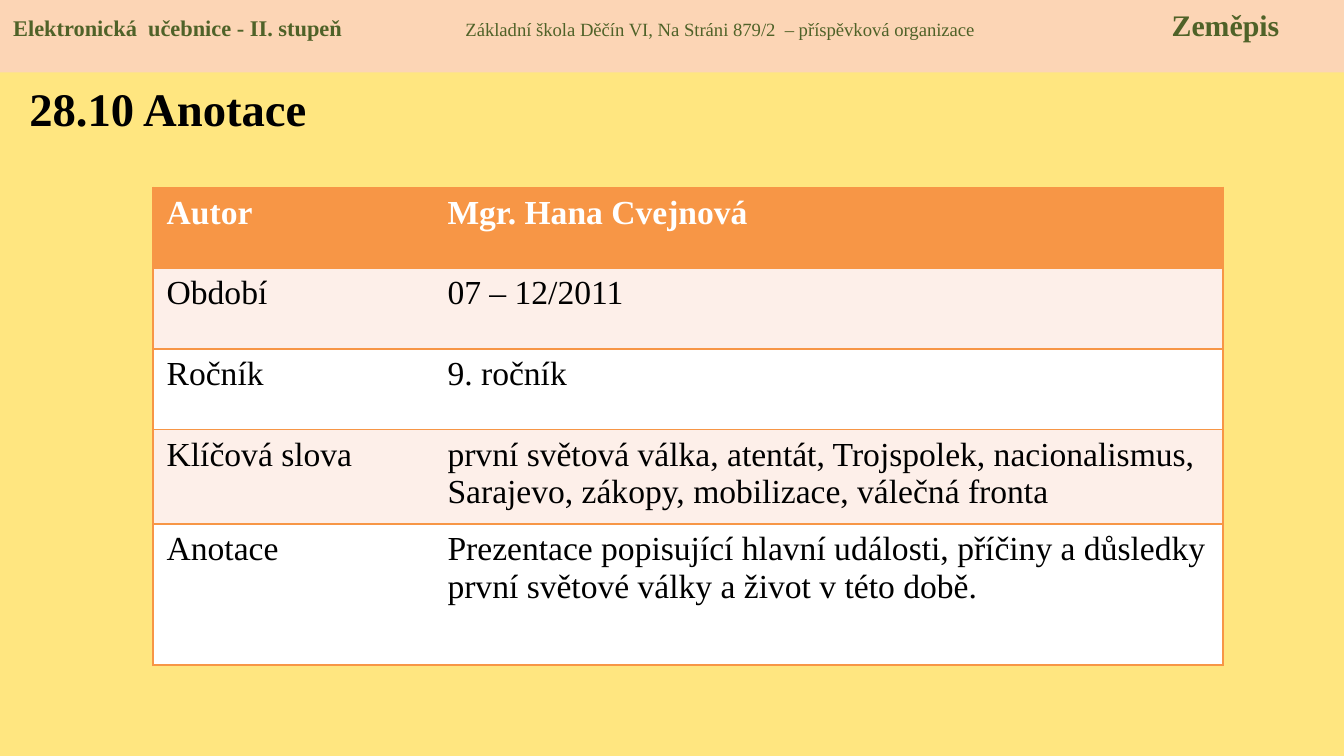
from lxml import etree
from pptx import Presentation
from pptx import util as u
from pptx.dml.color import RGBColor
from pptx.enum import shapes, text
from pptx.oxml.ns import qn

FONT = "Times New Roman"
ORANGE, PINK, WHITE, BLACK = "F79646", "FDEFE9", "FFFFFF", "000000"
PEACH, GREEN, YELLOW = "FCD5B5", "4F6228", "FFE680"
ROWS = [
    ("Autor", "Mgr. Hana Cvejnová"),
    ("Období", "07 – 12/2011"),
    ("Ročník", "9. ročník"),
    ("Klíčová slova", "první světová válka, atentát, Trojspolek, nacionalismus, "
                      "Sarajevo, zákopy, mobilizace, válečná fronta"),
    ("Anotace", "Prezentace popisující hlavní události, příčiny a důsledky "
                "první světové války a život v této době."),
]


def rgb(value):
    return RGBColor.from_string(value)


def grid(cells):
    return u.Inches(cells / 10)


class Deck:
    """Style and current slide; lengths are grid cells, 100 columns across the slide."""

    def __init__(self, cols, rows):
        self.prs = Presentation()
        self.prs.slide_width, self.prs.slide_height = grid(cols), grid(rows)
        self.slide = self.prs.slides.add_slide(self.prs.slide_layouts[6])
        self.fill(self.slide.background, YELLOW)

    def fill(self, target, color):
        target.fill.solid()
        target.fill.fore_color.rgb = rgb(color)

    def style(self, r, size, color, bold):
        r.font.name, r.font.size, r.font.bold = FONT, u.Pt(size), bold
        r.font.color.rgb = rgb(color)

    def frame(self, sp, top):
        tf = sp.text_frame
        tf.word_wrap = True
        tf.vertical_anchor = text.MSO_ANCHOR.TOP
        tf.margin_top = grid(top)
        return tf

    def banner(self, box, parts, stops):
        sp = self.slide.shapes.add_shape(shapes.MSO_SHAPE.RECTANGLE, *map(grid, box))
        sp.shadow.inherit = False
        self.fill(sp, PEACH)
        sp.line.fill.background()
        p = self.frame(sp, 0.5).paragraphs[0]
        p.alignment = text.PP_ALIGN.LEFT
        tabs = etree.SubElement(p._p.get_or_add_pPr(), qn("a:tabLst"))
        for stop in stops:
            etree.SubElement(tabs, qn("a:tab"), pos=str(grid(stop)), algn="l")
        for words, size, bold in parts:
            r = p.add_run()
            r.text = words
            self.style(r, size, GREEN, bold)

    def title(self, box, words):
        sp = self.slide.shapes.add_textbox(*map(grid, box))
        tf = self.frame(sp, 0.43)
        tf.text = words
        self.style(tf.paragraphs[0].runs[0], 25, BLACK, True)

    def border(self, cell, sides):
        tc_pr = cell._tc.get_or_add_tcPr()
        for i, side in enumerate("LRTB"):
            ln = etree.Element(qn(f"a:ln{side}"), w=str(u.Pt(1)))
            if side in sides:
                solid = etree.SubElement(ln, qn("a:solidFill"))
                etree.SubElement(solid, qn("a:srgbClr"), val=ORANGE)
            else:
                etree.SubElement(ln, qn("a:noFill"))
            tc_pr.insert(i, ln)

    def table(self, left, top, widths, heights, rows):
        box = (left, top, sum(widths), sum(heights))
        table = self.slide.shapes.add_table(len(rows), len(widths), *map(grid, box)).table
        for column, width in zip(table.columns, widths):
            column.width = grid(width)
        for i, (row, height) in enumerate(zip(rows, heights)):
            table.rows[i].height = grid(height)
            head = i == 0
            for j, words in enumerate(row):
                cell = table.cell(i, j)
                cell.text = words
                self.fill(cell, ORANGE if head else PINK if i % 2 else WHITE)
                self.style(cell.text_frame.paragraphs[0].runs[0], 18,
                           WHITE if head else BLACK, head)
                self.border(cell, "RTB" if j else "LTB")


def main():
    deck = Deck(100, 56.25)
    deck.banner((0, 0, 100, 5.4), [
        ("Elektronická  učebnice - II. stupeň\t", 12, True),
        ("Základní škola Děčín VI, Na Stráni 879/2  – příspěvková organizace\t", 10, False),
        ("Zeměpis", 16, True),
    ], stops=(33.65, 86.2))
    deck.table(11.4, 13.95, (20.9, 58.7), (6, 6, 6, 7.05, 10.5), ROWS)
    deck.title((1.2, 5.5, 37.8, 6.5), "28.10 Anotace")
    deck.prs.save("out.pptx")


if __name__ == "__main__":
    main()
